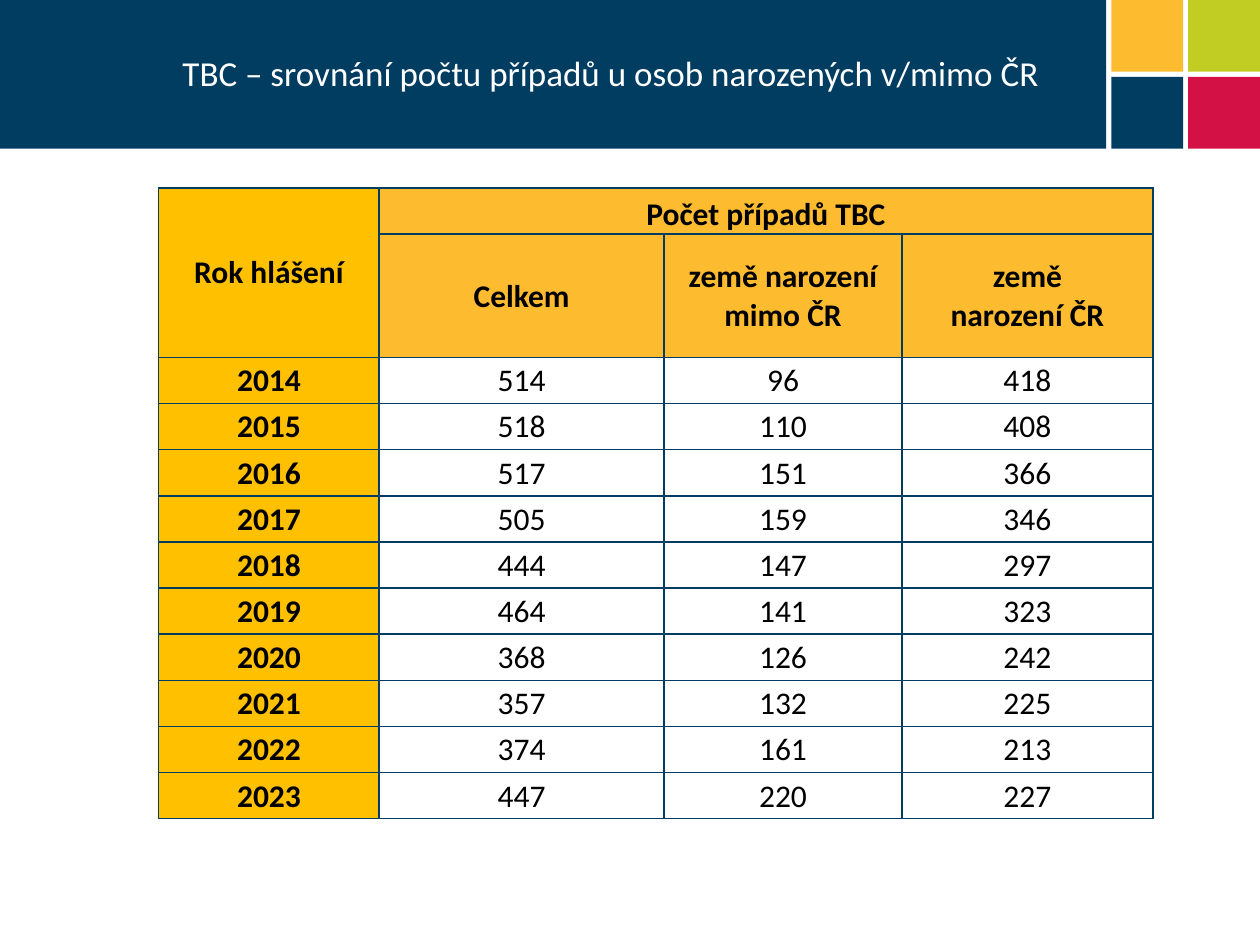
from dataclasses import dataclass

from lxml.etree import SubElement
from pptx import Presentation
from pptx.dml.color import RGBColor
from pptx.enum.shapes import MSO_SHAPE
from pptx.enum.text import MSO_ANCHOR, PP_ALIGN
from pptx.oxml.ns import qn
from pptx.util import Inches, Pt


@dataclass(frozen=True)
class Theme:
    font: str = "Calibri"
    navy: str = "003D61"
    red: str = "D31145"
    green: str = "C2CD23"
    orange: str = "FDBB30"
    amber: str = "FFC000"
    white: str = "FFFFFF"
    black: str = "000000"
    title_size: int = 20
    table_size: int = 18
    border_width: int = 1


THEME = Theme()
TITLE = "TBC – srovnání počtu případů u osob narozených v/mimo ČR"
COLUMN_HEADINGS = ["Celkem", "země narození mimo ČR", "země\nnarození ČR"]
CASES = [
    (2014, 514, 96, 418),
    (2015, 518, 110, 408),
    (2016, 517, 151, 366),
    (2017, 505, 159, 346),
    (2018, 444, 147, 297),
    (2019, 464, 141, 323),
    (2020, 368, 126, 242),
    (2021, 357, 132, 225),
    (2022, 374, 161, 213),
    (2023, 447, 220, 227),
]


def format_text(text_frame, size, color, alignment, bold=False):
    for paragraph in text_frame.paragraphs:
        paragraph.alignment = alignment
        for run in paragraph.runs:
            run.font.name = THEME.font
            run.font.size = Pt(size)
            run.font.bold = bold
            run.font.color.rgb = RGBColor.from_string(color)


def add_block(slide, left, top, width, height, color):
    shape = slide.shapes.add_shape(MSO_SHAPE.RECTANGLE, left, top, width, height)
    shape.shadow.inherit = False
    shape.fill.solid()
    shape.fill.fore_color.rgb = RGBColor.from_string(color)
    shape.line.fill.background()


def add_title_band(slide, left, top, width, height):
    add_block(slide, left, top, width, height, THEME.navy)
    indent = Inches(1.35)
    text_box = slide.shapes.add_textbox(
        left + indent, top, width - indent, height - Inches(0.03)
    )
    text_frame = text_box.text_frame
    text_frame.word_wrap = True
    text_frame.vertical_anchor = MSO_ANCHOR.MIDDLE
    text_frame.text = TITLE
    format_text(text_frame, THEME.title_size, THEME.white, PP_ALIGN.LEFT)


def add_color_squares(slide, left, top, size):
    side = Inches(0.57)
    step = size - side
    colors = [[THEME.orange, THEME.green], [THEME.navy, THEME.red]]
    for row, row_colors in enumerate(colors):
        for column, color in enumerate(row_colors):
            add_block(slide, left + column * step, top + row * step, side, side, color)


def add_borders(cell):
    properties = cell._tc.get_or_add_tcPr()
    for edge in ("a:lnL", "a:lnR", "a:lnT", "a:lnB"):
        line = SubElement(properties, qn(edge), w=str(Pt(THEME.border_width)))
        fill = SubElement(line, qn("a:solidFill"))
        SubElement(fill, qn("a:srgbClr"), val=THEME.navy)


def style_cell(cell, fill_color=None):
    add_borders(cell)
    if fill_color:
        cell.fill.solid()
        cell.fill.fore_color.rgb = RGBColor.from_string(fill_color)
    else:
        cell.fill.background()
    cell.margin_left = cell.margin_right = cell.margin_top = Inches(0.01)
    cell.margin_bottom = 0
    cell.vertical_anchor = MSO_ANCHOR.MIDDLE
    format_text(
        cell.text_frame,
        THEME.table_size,
        THEME.black,
        PP_ALIGN.CENTER,
        bold=fill_color is not None,
    )


def add_case_table(slide, left, top, width, height):
    header_rows = 2
    column_widths = [1.75, 2.26, 1.89, 1.99]
    frame = slide.shapes.add_table(
        len(CASES) + header_rows, len(column_widths), left, top, width, height
    )
    table = frame.table
    table.first_row = False
    table.horz_banding = False
    for column, column_width in zip(table.columns, column_widths):
        column.width = Inches(column_width)

    heading_height = Inches(0.98)
    row_height = (height - heading_height) // (len(table.rows) - 1)
    for row in table.rows:
        row.height = row_height
    table.rows[1].height = heading_height

    table.cell(0, 0).merge(table.cell(1, 0))
    table.cell(0, 1).merge(table.cell(0, 3))
    table.cell(0, 0).text_frame.text = "Rok hlášení"
    table.cell(0, 1).text_frame.text = "Počet případů TBC"
    for column, heading in enumerate(COLUMN_HEADINGS, start=1):
        table.cell(1, column).text_frame.text = heading
    for row, values in enumerate(CASES, start=header_rows):
        for column, value in enumerate(values):
            table.cell(row, column).text_frame.text = str(value)

    for row in range(len(table.rows)):
        for column in range(len(column_widths)):
            if column == 0:
                color = THEME.amber
            elif row < header_rows:
                color = THEME.orange
            else:
                color = None
            style_cell(table.cell(row, column), color)
    table.cell(0, 1).vertical_anchor = MSO_ANCHOR.BOTTOM


def main():
    presentation = Presentation()
    presentation.slide_width = Inches(10)
    presentation.slide_height = Inches(7.5)
    slide = presentation.slides.add_slide(presentation.slide_layouts[6])
    add_title_band(slide, 0, 0, Inches(8.78), Inches(1.18))
    add_color_squares(slide, Inches(8.82), 0, Inches(1.18))
    add_case_table(slide, Inches(1.26), Inches(1.49), Inches(7.9), Inches(5.01))
    presentation.save("out.pptx")


if __name__ == "__main__":
    main()
